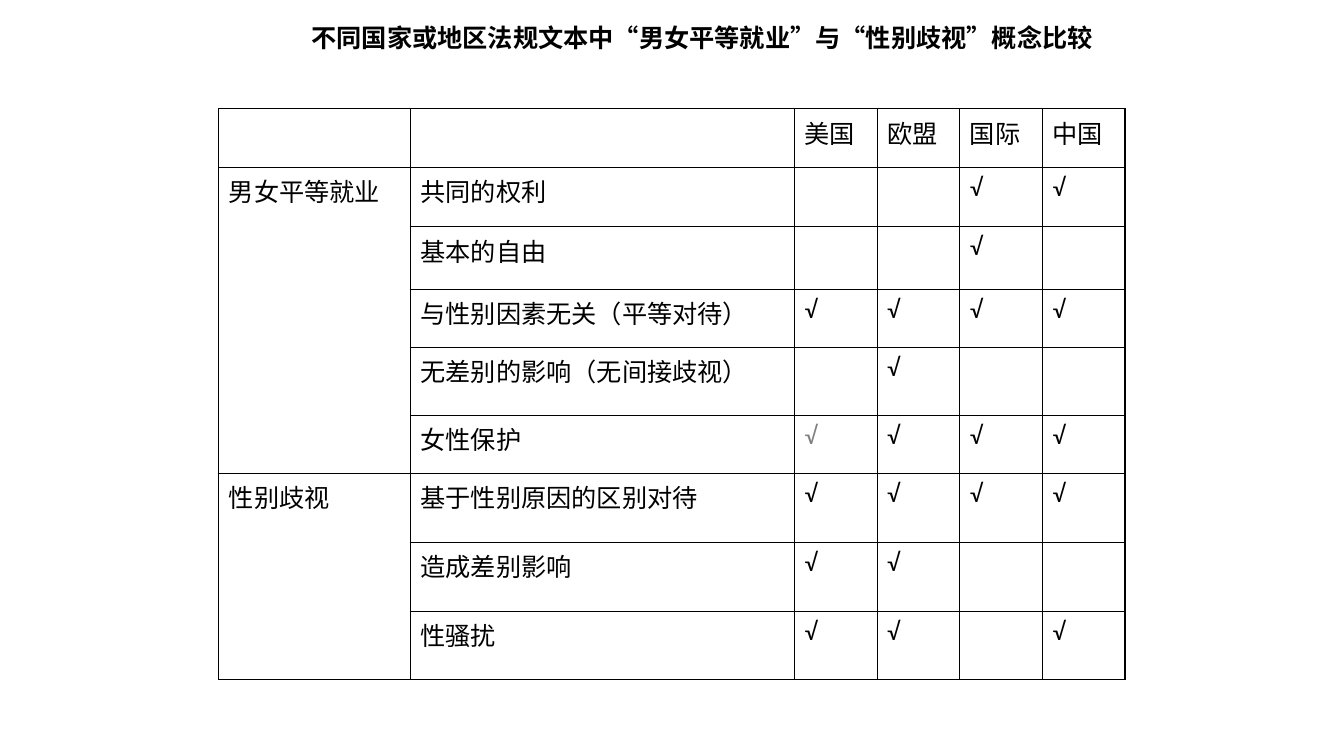
import pptx
import pptx.dml.color
import pptx.enum.text
import pptx.oxml
import pptx.oxml.ns
import pptx.util
from pptx.util import Inches

COLORS = {"text": "000000", "faint": "808080", "border": "000000"}
COUNTRIES = ["美国", "欧盟", "国际", "中国"]
GROUPS = {
    "男女平等就业": [
        ("共同的权利", ["国际", "中国"]),
        ("基本的自由", ["国际"]),
        ("与性别因素无关（平等对待）", COUNTRIES),
        ("无差别的影响（无间接歧视）", ["欧盟"]),
        ("女性保护", COUNTRIES),
    ],
    "性别歧视": [
        ("基于性别原因的区别对待", COUNTRIES),
        ("造成差别影响", ["美国", "欧盟"]),
        ("性骚扰", ["美国", "欧盟", "中国"]),
    ],
}
FAINT_MARK = ("女性保护", "美国")
COLUMN_WIDTHS = [1.9, 3.81] + [0.82] * 4
ROW_HEIGHTS = [0.58, 0.59, 0.62, 0.58, 0.67, 0.58, 0.68, 0.69, 0.67]


def style_font(font, name, color):
    font.name = name
    font.size = pptx.util.Pt(18)
    font.color.rgb = pptx.dml.color.RGBColor.from_string(COLORS[color])


presentation = pptx.Presentation()
presentation.slide_width = Inches(13.33)
presentation.slide_height = Inches(7.5)
slide = presentation.slides.add_slide(presentation.slide_layouts[6])

rows = [["", ""] + COUNTRIES]
merges = []
for group, concepts in GROUPS.items():
    merges.append((len(rows), len(rows) + len(concepts) - 1))
    for index, (concept, marked) in enumerate(concepts):
        marks = ["√" if country in marked else "" for country in COUNTRIES]
        rows.append([group if index == 0 else "", concept] + marks)

table = slide.shapes.add_table(
    len(rows), len(COLUMN_WIDTHS), Inches(2.17), Inches(1.08),
    Inches(sum(COLUMN_WIDTHS)), Inches(sum(ROW_HEIGHTS))).table
table.first_row = False
table.horz_banding = False
for column, width in zip(table.columns, COLUMN_WIDTHS):
    column.width = Inches(width)
for row, height in zip(table.rows, ROW_HEIGHTS):
    row.height = Inches(height)

for row_index, texts in enumerate(rows):
    for column_index, text in enumerate(texts):
        cell = table.cell(row_index, column_index)
        cell.text_frame.text = text
        paragraph = cell.text_frame.paragraphs[0]
        properties = paragraph._p.get_or_add_pPr()
        properties.set("marL", str(Inches(0.38)))
        properties.set("indent", str(Inches(-0.38)))
        faint = (texts[1], rows[0][column_index]) == FAINT_MARK
        style_font(paragraph.font, "Calibri", "faint" if faint else "text")
        for run in paragraph.runs:
            style_font(run.font, "Calibri", "faint" if faint else "text")
        cell_properties = cell._tc.get_or_add_tcPr()
        for side in ("lnL", "lnR", "lnT", "lnB"):
            cell_properties.append(pptx.oxml.parse_xml(
                f'<a:{side} {pptx.oxml.ns.nsdecls("a")} w="12700"><a:solidFill>'
                f'<a:srgbClr val="{COLORS["border"]}"/></a:solidFill></a:{side}>'))
        cell.fill.background()

for first, last in merges:
    table.cell(first, 0).merge(table.cell(last, 0))

title = slide.shapes.add_textbox(Inches(2.99), Inches(0.17), Inches(8.15), Inches(0.4))
title.text_frame.text = "不同国家或地区法规文本中“男女平等就业”与“性别歧视”概念比较"
title.text_frame.word_wrap = False
title.text_frame.auto_size = pptx.enum.text.MSO_AUTO_SIZE.SHAPE_TO_FIT_TEXT
title.text_frame.vertical_anchor = pptx.enum.text.MSO_ANCHOR.MIDDLE
title_font = title.text_frame.paragraphs[0].runs[0].font
style_font(title_font, "Arial", "text")
title_font.bold = True

presentation.save("out.pptx")
